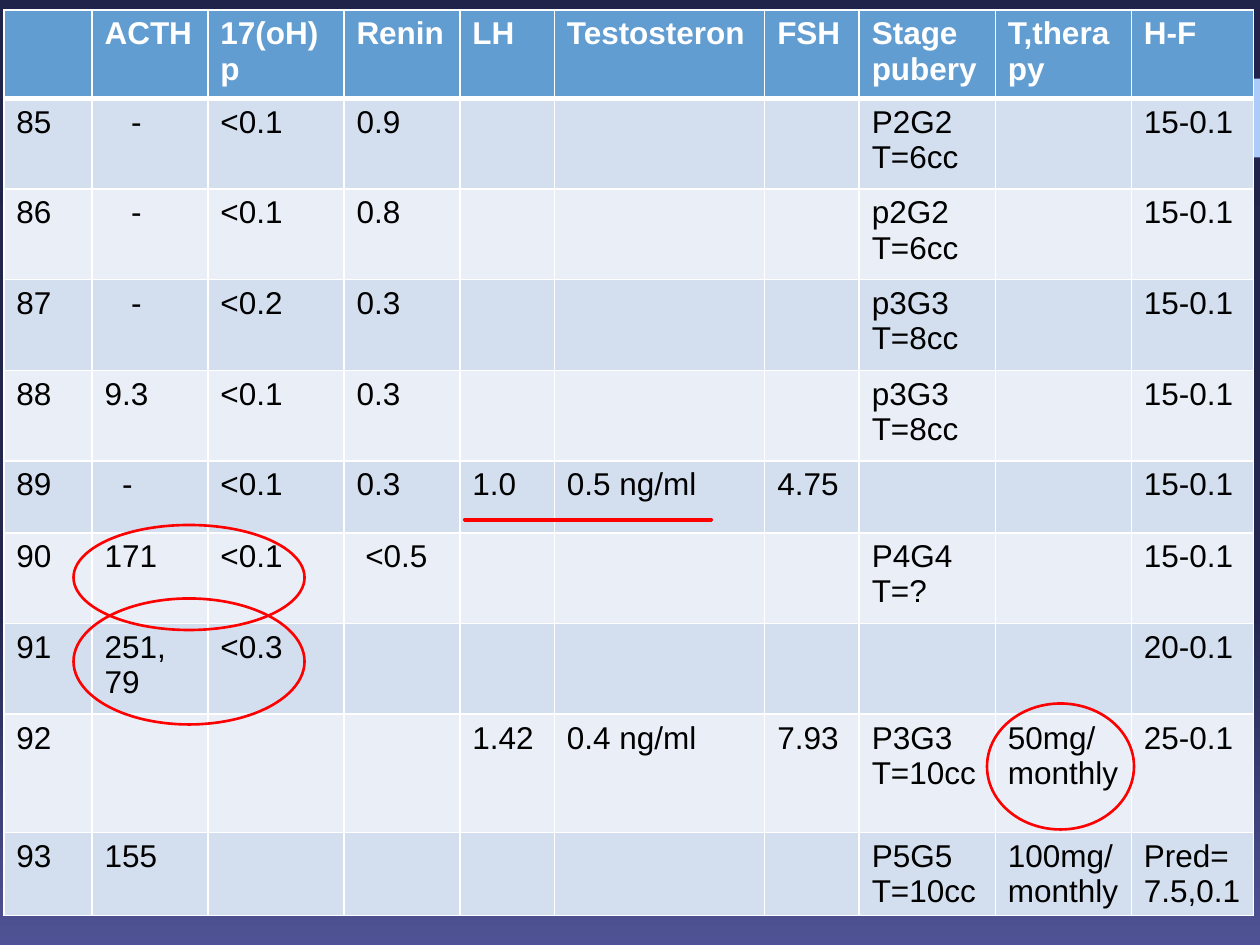
import copy
import lxml.etree
import pptx
import pptx.dml.color
import pptx.enum.shapes
import pptx.oxml.ns
import pptx.util

SHAPE = pptx.enum.shapes.MSO_SHAPE
qn = pptx.oxml.ns.qn
inch = pptx.util.Inches
unit = inch(1) / 12
white, red, blue, pale = "FFFFFF", "FF0000", "629DD1", "ACCBF9"


def tint(text):
    return pptx.dml.color.RGBColor.from_string(text)


def write(frame, text, size=18, color="000000", bold=False, indent=0):
    for i, line in enumerate(text.split("\n")):
        para = frame.paragraphs[0] if i == 0 else frame.add_paragraph()
        if indent:
            para._p.get_or_add_pPr().set("marL", str(inch(indent)))
        para.font.size = pptx.util.Pt(size)
        if line:
            run = para.add_run()
            run.text = line
            run.font.name = "Arial"
            run.font.size = pptx.util.Pt(size)
            run.font.bold = bold
            run.font.color.rgb = tint(color)


deck = pptx.Presentation()
deck.slide_width, deck.slide_height = inch(10), inch(7.5)
wide, high = deck.slide_width, deck.slide_height
slide = deck.slides.add_slide(deck.slide_layouts[6])

# Background gradient, top to bottom
fill = slide.background.fill
fill.gradient()
fill.gradient_angle = 270
first = fill.gradient_stops[0]._gs
first.addnext(copy.deepcopy(first))
stops = [(0, "21244A"), (0.65, "232750"), (1, "4F5395")]
for stop, (pos, color) in zip(fill.gradient_stops, stops):
    stop.position = pos
    stop.color.rgb = tint(color)

# Bars at the right edge
for left, width in [(0.922, 0.009), (0.937, 0.063)]:
    bar = slide.shapes.add_shape(SHAPE.RECTANGLE, int(left * wide), int(high / 12),
                                 int(width * wide), int(high / 12))
    bar.shadow.inherit = False
    bar.fill.solid()
    bar.fill.fore_color.rgb = tint(pale)
    bar.line.fill.background()

# Table of yearly values
rows = [
    ["", "ACTH", "17(oH)p", "Renin", "LH", "Testosteron", "FSH",
     "Stage\npubery", "T,therapy", "H-F"],
    ["85", "-", "<0.1", "0.9", "", "", "", "P2G2\nT=6cc", "", "15-0.1"],
    ["86", "-", "<0.1", "0.8", "", "", "", "p2G2\nT=6cc", "", "15-0.1"],
    ["87", "-", "<0.2", "0.3", "", "", "", "p3G3\nT=8cc", "", "15-0.1"],
    ["88", "9.3", "<0.1", "0.3", "", "", "", "p3G3\nT=8cc", "", "15-0.1"],
    ["89", "-", "<0.1", "0.3", "1.0", "0.5 ng/ml", "4.75", "", "", "15-0.1"],
    ["90", "171", "<0.1", "<0.5", "", "", "", "P4G4\nT=?", "", "15-0.1"],
    ["91", "251,\n79", "<0.3", "", "", "", "", "", "", "20-0.1"],
    ["92", "", "", "", "1.42", "0.4 ng/ml", "7.93", "P3G3\nT=10cc",
     "50mg/monthly", "25-0.1"],
    ["93", "155", "", "", "", "", "", "P5G5\nT=10cc", "100mg/monthly",
     "Pred=7.5,0.1"],
]
cols = [0.7, 0.92, 1.08, 0.92, 0.75, 1.67, 0.75, 1.08, 1.08, 0.97]
tall = [0.7] + [0.72] * 4 + [0.57, 0.72, 0.72, 0.94, 0.65]
shift = {(1, 1): 0.21, (2, 1): 0.21, (3, 1): 0.21, (5, 1): 0.14, (6, 3): 0.07}

table = slide.shapes.add_table(len(rows), len(cols), inch(0.03), inch(0.08),
                               inch(sum(cols)), inch(sum(tall))).table
table.first_row = table.horz_banding = False
for col, size in zip(table.columns, cols):
    col.width = inch(size)
for r, line in enumerate(rows):
    table.rows[r].height = inch(tall[r])
    for c, text in enumerate(line):
        cell = table.cell(r, c)
        prop = cell._tc.get_or_add_tcPr()
        for side in "LRTB":
            thick = 3 if (r, side) in [(0, "B"), (1, "T")] else 1
            edge = lxml.etree.SubElement(prop, qn("a:ln" + side),
                                         w=str(pptx.util.Pt(thick)))
            solid = lxml.etree.SubElement(edge, qn("a:solidFill"))
            lxml.etree.SubElement(solid, qn("a:srgbClr"), val=white)
        cell.fill.solid()
        band = "D3DFEE" if r % 2 else "EAEFF7"
        cell.fill.fore_color.rgb = tint(band if r else blue)
        write(cell.text_frame, text, bold=r == 0,
              color="000000" if r else white, indent=shift.get((r, c), 0))

# Red marks, placed on a grid of twelfths of an inch
marks = [
    (SHAPE.OVAL, 7, 50, 22, 10),
    (SHAPE.OVAL, 7, 57, 22, 12),
    (SHAPE.OVAL, 94, 67, 14, 12),
    (SHAPE.MATH_MINUS, 40, 47, 32, 5),
]
for kind, *box in marks:
    mark = slide.shapes.add_shape(kind, *[int(n * unit) for n in box])
    mark.shadow.inherit = False
    mark.line.color.rgb = tint(red)
    mark.line.width = pptx.util.Pt(1.5)
    if kind == SHAPE.OVAL:
        mark.fill.background()
    else:
        mark.adjustments[0] = 0.03
        mark.fill.solid()
        mark.fill.fore_color.rgb = tint(blue)

deck.save("out.pptx")
